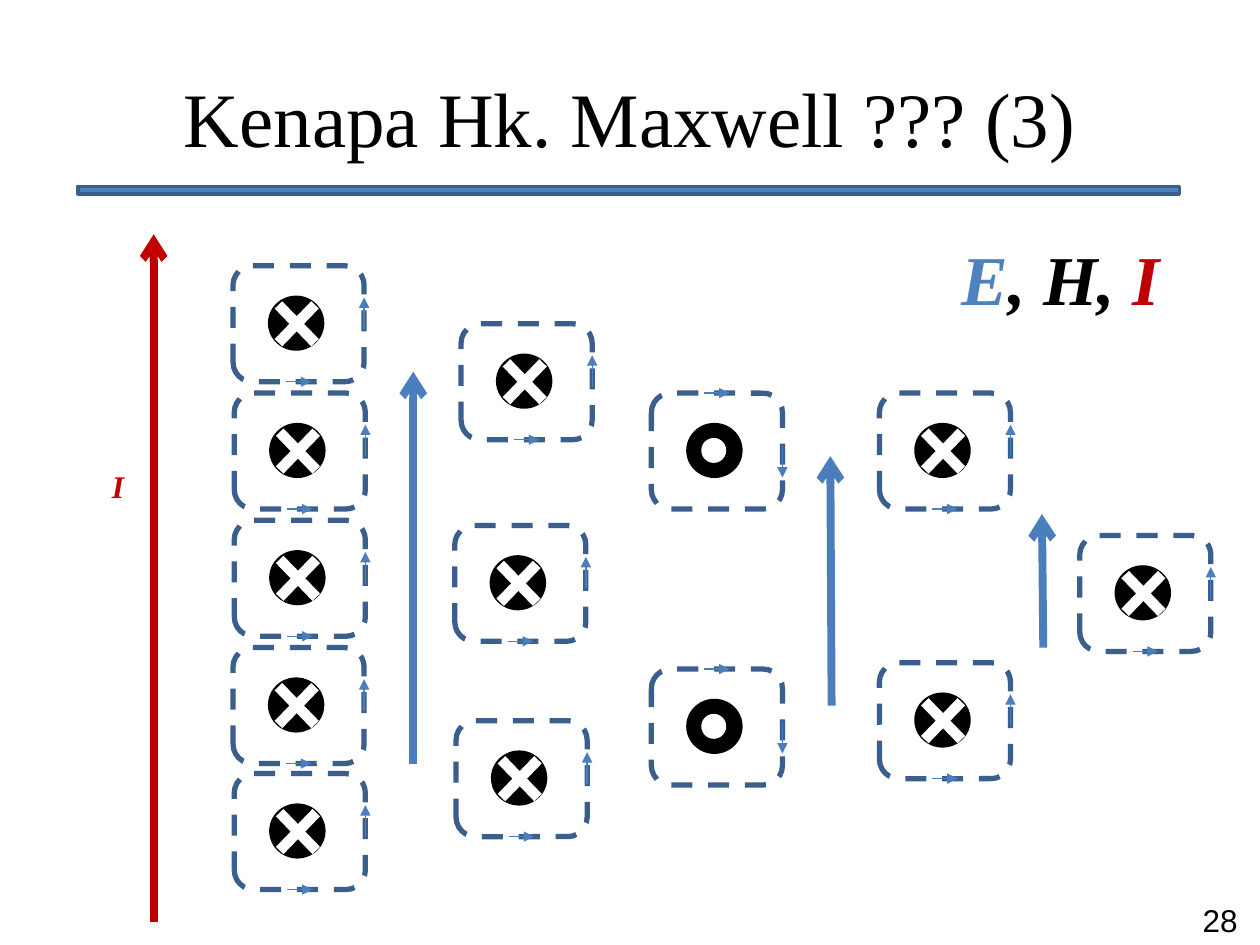
from lxml import etree
from pptx import Presentation
from pptx import util as u
from pptx.dml.color import RGBColor
from pptx.enum import dml, shapes, text
from pptx.oxml.ns import qn

TITLE = "Kenapa Hk. Maxwell ??? (3)"
BLUE, EDGE, ARROW, RED = "4F81BD", "3A5F8C", "4B7EBC", "C00000"
BLACK, WHITE = "000000", "FFFFFF"
SERIF = "Times New Roman"
BOLD_ITALIC = {"bold": True, "italic": True}

LOOP_WIDTH, LOOP_HEIGHT = 1.04, 0.92
INWARD_LOOPS = [
    (1.85, 2.11), (1.86, 3.12), (1.86, 4.13), (1.85, 5.14), (1.86, 6.14),
    (3.66, 2.57), (3.61, 4.17), (3.62, 5.72),
    (6.98, 3.12), (6.98, 5.26), (8.57, 4.25),
]
OUTWARD_LOOPS = [(5.17, 3.12), (5.17, 5.31)]
FIELD_ARROWS = [
    ((3.28, 6.06), (3.28, 2.95), ARROW),
    ((6.6, 5.6), (6.59, 3.62), ARROW),
    ((8.28, 5.14), (8.27, 4.08), ARROW),
    ((1.22, 7.32), (1.22, 1.86), RED),
]
LABELS = [
    ((7.18, 1.82, 2.48, 0.77), "CENTER", True, 40, SERIF, BOLD_ITALIC,
     [("E", BLUE), (", H, ", BLACK), ("I", RED)]),
    ((0.79, 3.66, 0.3, 0.4), "LEFT", False, 18, SERIF, BOLD_ITALIC, [("I", RED)]),
    ((8.67, 7.1, 1.25, 0.4), "RIGHT", True, 18, "Arial", {}, [("28", BLACK)]),
]


def color(hex_value):
    return RGBColor.from_string(hex_value)


def inches(values):
    return [u.Inches(value) for value in values]


def add_shape(parent, kind, box, fill, line, width):
    shape = parent.add_shape(kind, *inches(box))
    shape.shadow.inherit = False
    if fill:
        shape.fill.solid()
        shape.fill.fore_color.rgb = color(fill)
    else:
        shape.fill.background()
    shape.line.color.rgb = color(line)
    shape.line.width = u.Pt(width)
    return shape


def add_line(parent, start, end, line, width, head=None):
    connector = parent.add_connector(shapes.MSO_CONNECTOR.STRAIGHT, *inches(start + end))
    connector.line.color.rgb = color(line)
    connector.line.width = u.Pt(width)
    properties = connector._element.spPr
    if head:
        outline = properties.find(qn("a:ln"))
        etree.SubElement(outline, qn("a:tailEnd"), type=head)
    etree.SubElement(properties, qn("a:effectLst"))


def add_loop(slide, left, top, inward):
    group = slide.shapes.add_group_shape().shapes
    frame = add_shape(group, shapes.MSO_SHAPE.ROUNDED_RECTANGLE,
                      (left, top, LOOP_WIDTH, LOOP_HEIGHT), None, EDGE, 3)
    frame.line.dash_style = dml.MSO_LINE.DASH
    right, bottom = left + LOOP_WIDTH, top + LOOP_HEIGHT
    if inward:
        frame._element.spPr.xfrm.set("flipV", "1")
        edge, side_start, side_end = bottom, top + 0.5, top + 0.25
    else:
        edge, side_start, side_end = top, top + 0.42, top + 0.67
    add_line(group, (left + 0.42, edge), (left + 0.62, edge), ARROW, 0.75, "triangle")
    add_line(group, (right, side_start), (right, side_end), ARROW, 0.75, "triangle")

    oval = shapes.MSO_SHAPE.OVAL
    add_shape(group, oval, (left + 0.29, top + 0.25, 0.42, 0.41), BLACK, BLACK, 2)
    if inward:
        near, far = left + 0.36, left + 0.65
        for start, end in ((near, far), (far, near)):
            add_line(group, (start, top + 0.31), (end, top + 0.61), WHITE, 6)
    else:
        add_shape(group, oval, (left + 0.41, top + 0.37, 0.17, 0.17), WHITE, WHITE, 2)


def write_runs(paragraph, runs, size, font_name, styles):
    for words, hex_value in runs:
        run = paragraph.add_run()
        run.text = words
        run.font.color.rgb = color(hex_value)
        for name, value in {"size": u.Pt(size), "name": font_name, **styles}.items():
            setattr(run.font, name, value)


def add_title(slide):
    title = slide.shapes.title
    box = dict(zip(("left", "top", "width", "height"), inches((0.5, 0.3, 9, 1.25))))
    for name, value in box.items():
        setattr(title, name, value)
    title.text_frame.vertical_anchor = text.MSO_ANCHOR.MIDDLE
    paragraph = title.text_frame.paragraphs[0]
    paragraph.alignment = text.PP_ALIGN.CENTER
    write_runs(paragraph, [(TITLE, BLACK)], 44, SERIF, {})


def main():
    """Build the slide of field loops and save it."""
    presentation = Presentation()
    presentation.slide_width, presentation.slide_height = inches((10, 7.5))
    slide = presentation.slides.add_slide(presentation.slide_layouts[5])
    add_shape(slide.shapes, shapes.MSO_SHAPE.RECTANGLE, (0.62, 1.48, 8.74, 0.06), BLUE, EDGE, 2)
    add_title(slide)
    for loops, inward in ((INWARD_LOOPS, True), (OUTWARD_LOOPS, False)):
        for left, top in loops:
            add_loop(slide, left, top, inward)
    for start, end, line in FIELD_ARROWS:
        add_line(slide.shapes, start, end, line, 4.5, "arrow")
    for box, alignment, wrap, size, font_name, styles, runs in LABELS:
        frame = slide.shapes.add_textbox(*inches(box)).text_frame
        frame.word_wrap = wrap
        frame.auto_size = text.MSO_AUTO_SIZE.SHAPE_TO_FIT_TEXT
        frame.paragraphs[0].alignment = getattr(text.PP_ALIGN, alignment)
        write_runs(frame.paragraphs[0], runs, size, font_name, styles)
    presentation.save("out.pptx")


if __name__ == "__main__":
    main()
